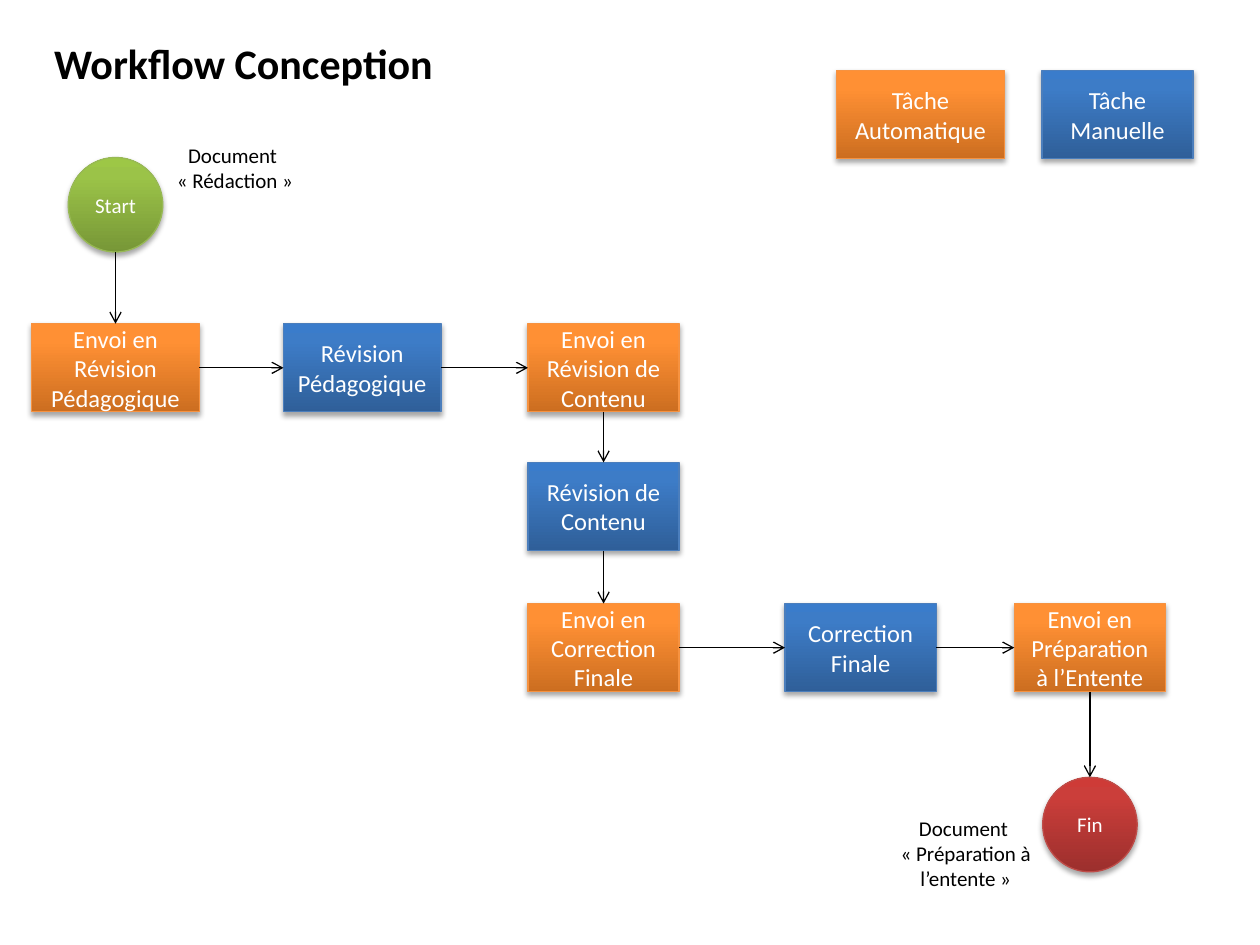
import copy
from dataclasses import dataclass

import lxml.etree
import pptx
import pptx.dml.color
import pptx.enum.shapes
import pptx.enum.text
import pptx.oxml.ns
import pptx.shapes.autoshape
import pptx.slide
import pptx.text.text
import pptx.util

Pt = pptx.util.Pt
RGB = pptx.dml.color.RGBColor.from_string
Kind = pptx.enum.shapes.MSO_SHAPE
Align = pptx.enum.text.PP_ALIGN
Anchor = pptx.enum.text.MSO_ANCHOR
qn = pptx.oxml.ns.qn


@dataclass(frozen=True)
class Tone:
    """Gradient colours from bottom to top, and the outline."""
    low: str
    mid: str
    high: str
    edge: str


@dataclass(frozen=True)
class Theme:
    font: str = "Calibri"
    title: float = 24
    task: float = 14
    note: float = 12
    dark: str = "000000"
    light: str = "FFFFFF"
    rule: float = 0.75
    auto: Tone = Tone("CC6E20", "FF9034", "FF9136", "F69240")
    manual: Tone = Tone("2F5F99", "3D7CC7", "3A7CCB", "4B7EBC")
    start: Tone = Tone("779737", "9BC348", "9DC746", "98B955")
    end: Tone = Tone("9C2F2D", "CB3E3A", "CE3B37", "BF4C48")


THEME = Theme()
TALL, WIDE, DISC = 50.4, 86.4, 54
ROWS = (185, 264.25, 344.9)
COLS = (18, 162, 301.7, 448.6, 579.6)
LEGEND = 40.3
TOP, LEFT, BOTTOM, RIGHT = range(4)


@dataclass(frozen=True)
class Node:
    key: str
    text: str
    left: float
    top: float
    tone: Tone
    width: float = WIDE
    height: float = TALL
    round: bool = False

    def spot(self, site: int) -> tuple[pptx.util.Length, pptx.util.Length]:
        """Middle of the side that a connection site stands for."""
        x, y = {TOP: (0.5, 0), LEFT: (0, 0.5), BOTTOM: (0.5, 1), RIGHT: (1, 0.5)}[site]
        return Pt(self.left + x * self.width), Pt(self.top + y * self.height)


@dataclass(frozen=True)
class Link:
    """An arrow between two nodes, with the connection site at each."""
    tail: str
    head: str
    out: int
    into: int


@dataclass(frozen=True)
class Note:
    lines: tuple[str, ...]
    left: float
    top: float
    width: float
    height: float
    size: float = THEME.note
    bold: bool = False
    align: Align = Align.CENTER


NODES = (
    Node("start", "Start", COLS[0] + 21, 90, THEME.start, DISC, DISC, True),
    Node("send_ped", "Envoi en Révision Pédagogique", COLS[0], ROWS[0], THEME.auto, 96),
    Node("ped", "Révision Pédagogique", COLS[1], ROWS[0], THEME.manual, 90),
    Node("send_text", "Envoi en Révision de Contenu", COLS[2], ROWS[0], THEME.auto),
    Node("text", "Révision de Contenu", COLS[2], ROWS[1], THEME.manual),
    Node("send_fix", "Envoi en Correction Finale", COLS[2], ROWS[2], THEME.auto),
    Node("fix", "Correction Finale", COLS[3], ROWS[2], THEME.manual),
    Node("send_prep", "Envoi en Préparation à l’Entente", COLS[4], ROWS[2], THEME.auto),
    Node("end", "Fin", COLS[4] + (WIDE - DISC) / 2, 444.2, THEME.end, DISC, DISC, True),
    Node("key_auto", "Tâche Automatique", 478, LEGEND, THEME.auto, 96),
    Node("key_man", "Tâche Manuelle", 595.4, LEGEND, THEME.manual),
)

LINKS = (
    Link("start", "send_ped", BOTTOM, TOP),
    Link("send_ped", "ped", RIGHT, LEFT),
    Link("ped", "send_text", RIGHT, LEFT),
    Link("send_text", "text", BOTTOM, TOP),
    Link("text", "send_fix", BOTTOM, TOP),
    Link("send_fix", "fix", RIGHT, LEFT),
    Link("fix", "send_prep", RIGHT, LEFT),
    Link("send_prep", "end", BOTTOM, TOP),
)

NOTES = (
    Note(("Workflow Conception",), 23.8, 18, 642, 36, THEME.title, True, Align.LEFT),
    Note(("Document ", "« Rédaction »"), 77.8, 77.8, 113, 36),
    Note(("Document ", "« Préparation à l’entente »"), 503.3, 462.2, 97.2, 51),
)


def write(frame: pptx.text.text.TextFrame, *lines: str, size: float, color: str,
          bold: bool = False, align: Align = Align.CENTER,
          anchor: Anchor = Anchor.TOP) -> None:
    frame.word_wrap = True
    frame.vertical_anchor = anchor
    for num, line in enumerate(lines):
        para = frame.add_paragraph() if num else frame.paragraphs[0]
        para.alignment = align
        run = para.add_run()
        run.text = line
        font = run.font
        font.name, font.size, font.bold = THEME.font, Pt(size), bold
        font.color.rgb = RGB(color)


def paint(shape: pptx.shapes.autoshape.Shape, tone: Tone) -> None:
    """Give a shape its three-stop gradient, outline and soft shadow."""
    shape.fill.gradient()
    shape.fill.gradient_angle = 90
    stops = shape._element.spPr.find(".//" + qn("a:gsLst"))
    stops.append(copy.deepcopy(stops[-1]))
    marks = ((0, tone.low), (0.8, tone.mid), (1, tone.high))
    for stop, (place, color) in zip(shape.fill.gradient_stops, marks):
        stop.position = place
        stop.color.rgb = RGB(color)
    shape.line.color.rgb = RGB(tone.edge)
    shape.line.width = Pt(THEME.rule)

    shape.shadow.inherit = False
    sub = lxml.etree.SubElement
    cast = sub(shape._element.spPr.find(qn("a:effectLst")), qn("a:outerShdw"),
               blurRad=str(Pt(3.1)), dist=str(Pt(1.8)), dir="5400000", rotWithShape="0")
    shade = sub(cast, qn("a:srgbClr"), val=THEME.dark)
    sub(shade, qn("a:alpha"), val="35000")


def draw_node(slide: pptx.slide.Slide, node: Node) -> pptx.shapes.autoshape.Shape:
    kind = Kind.OVAL if node.round else Kind.RECTANGLE
    shape = slide.shapes.add_shape(
        kind, Pt(node.left), Pt(node.top), Pt(node.width), Pt(node.height))
    paint(shape, node.tone)
    write(shape.text_frame, node.text, color=THEME.light, anchor=Anchor.MIDDLE,
          size=THEME.note if node.round else THEME.task)
    return shape


def draw_link(slide: pptx.slide.Slide, link: Link, nodes: dict[str, Node],
              shapes: dict[str, pptx.shapes.autoshape.Shape]) -> None:
    tail, head = nodes[link.tail], nodes[link.head]
    line = slide.shapes.add_connector(
        pptx.enum.shapes.MSO_CONNECTOR.STRAIGHT,
        *tail.spot(link.out), *head.spot(link.into))
    if not tail.round:
        line.begin_connect(shapes[link.tail], link.out)
    if not head.round:
        line.end_connect(shapes[link.head], link.into)
    line.line.color.rgb = RGB(THEME.dark)
    line.line.width = Pt(THEME.rule)
    props = line._element.spPr
    lxml.etree.SubElement(props.find(qn("a:ln")), qn("a:tailEnd"), type="arrow")
    lxml.etree.SubElement(props, qn("a:effectLst"))


def draw_note(slide: pptx.slide.Slide, note: Note) -> None:
    box = slide.shapes.add_textbox(
        Pt(note.left), Pt(note.top), Pt(note.width), Pt(note.height))
    write(box.text_frame, *note.lines, size=note.size, color=THEME.dark,
          bold=note.bold, align=note.align)
    box.text_frame.auto_size = pptx.enum.text.MSO_AUTO_SIZE.SHAPE_TO_FIT_TEXT


def main() -> None:
    deck = pptx.Presentation()
    deck.slide_width, deck.slide_height = Pt(720), Pt(540)
    slide = deck.slides.add_slide(deck.slide_layouts[6])
    nodes = {node.key: node for node in NODES}
    shapes = {node.key: draw_node(slide, node) for node in NODES}
    for link in LINKS:
        draw_link(slide, link, nodes, shapes)
    for note in NOTES:
        draw_note(slide, note)
    deck.save("out.pptx")


if __name__ == "__main__":
    main()
